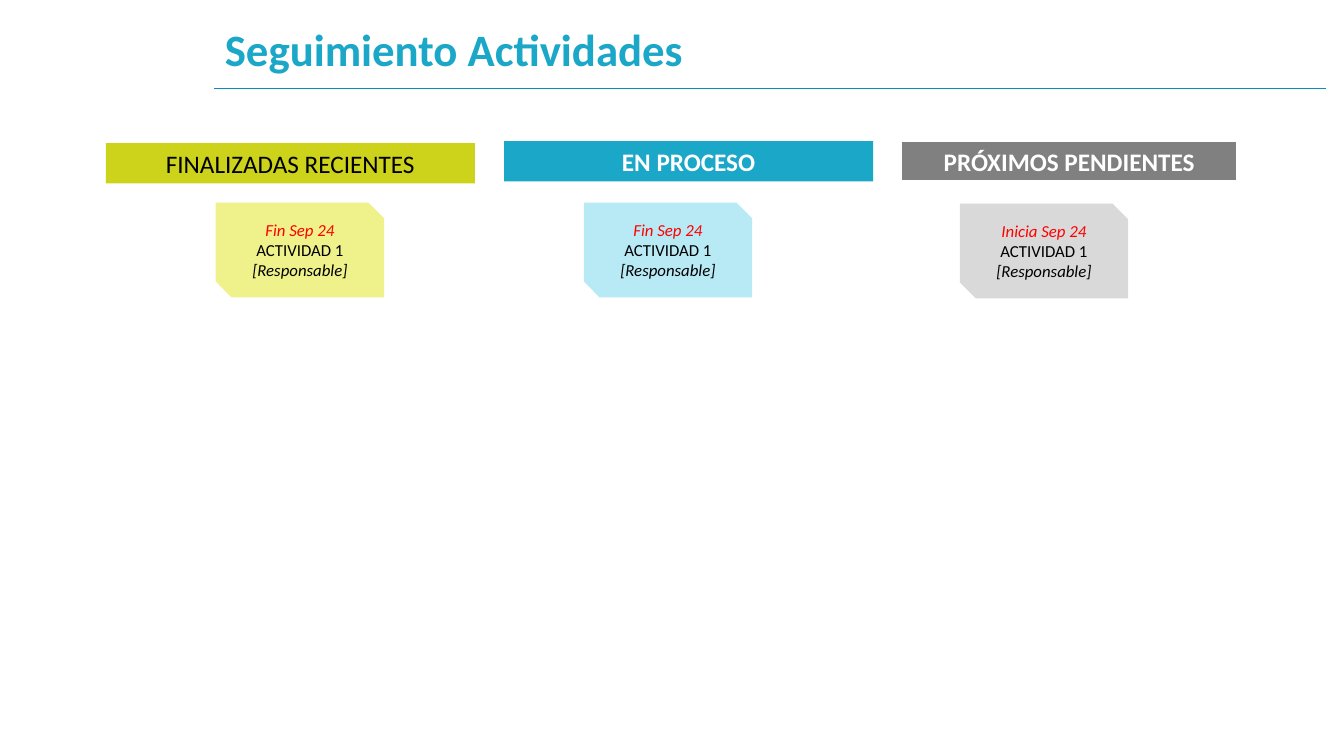
from dataclasses import dataclass

from lxml import etree
from pptx import Presentation
from pptx import util as u
from pptx.dml.color import RGBColor
from pptx.enum import shapes, text
from pptx.oxml.ns import qn

COLORS = {
    "white": "FFFFFF", "black": "000000", "red": "FF0000",
    "rule": "098CBF", "blue": "1AA7C8", "pale_blue": "B8EAF6",
    "lime": "CDD21A", "pale_lime": "EFF18B",
    "gray": "808080", "pale_gray": "D9D9D9",
}
FONT = "Calibri"
GRID = 0.1  # inches per grid column and per grid row
CARD_SIZE = (16.7, 9.4)
HEADER_ROWS = 4


@dataclass
class Box:
    column: float
    row: float
    columns: float
    rows: float


@dataclass
class Run:
    words: str
    color: str
    size: int
    bold: bool = False
    italic: bool = False


@dataclass
class Stage:
    """A coloured heading and the activity card below it."""
    heading: Run
    header: Box
    fill: str
    card: Box
    card_fill: str
    date: str
    outline: str = ""


STAGES = [
    Stage(Run("FINALIZADAS RECIENTES", "black", 18), Box(10.5, 14.2, 36.6, HEADER_ROWS),
          "lime", Box(21.4, 20.1, *CARD_SIZE), "pale_lime", "Fin Sep 24"),
    Stage(Run("EN PROCESO", "white", 18, bold=True), Box(50, 14, 36.6, HEADER_ROWS),
          "blue", Box(57.9, 20.1, *CARD_SIZE), "pale_blue", "Fin Sep 24"),
    Stage(Run("PRÓXIMOS PENDIENTES", "white", 18, bold=True), Box(89.4, 14, 33.3, HEADER_ROWS),
          "gray", Box(95.2, 20.2, *CARD_SIZE), "pale_gray", "Inicia Sep 24", "white"),
]


def cells(count: float) -> int:
    """Length of a number of grid cells."""
    return u.Inches(count * GRID)


def rgb(name: str) -> RGBColor:
    return RGBColor.from_string(COLORS[name])


def place(box: Box) -> tuple:
    return tuple(cells(v) for v in (box.column, box.row, box.columns, box.rows))


def write(frame, runs: list, anchor, alignment) -> None:
    """Fill a text frame with one paragraph for each run."""
    frame.word_wrap = True
    frame.vertical_anchor = anchor
    for index, item in enumerate(runs):
        paragraph = frame.add_paragraph() if index else frame.paragraphs[0]
        paragraph.alignment = alignment
        run = paragraph.add_run()
        run.text = item.words
        formats = {"name": FONT, "size": u.Pt(item.size), "bold": item.bold, "italic": item.italic}
        for name, value in formats.items():
            setattr(run.font, name, value)
        run.font.color.rgb = rgb(item.color)


def add_box(slide, kind, box: Box, fill: str, runs: list, anchor, outline: str = ""):
    shape = slide.shapes.add_shape(kind, *place(box))
    shape.shadow.inherit = False
    shape.fill.solid()
    shape.fill.fore_color.rgb = rgb(fill)
    if outline:
        shape.line.color.rgb = rgb(outline)
        shape.line.width = u.Pt(1.5)
    else:
        shape.line.fill.background()
    write(shape.text_frame, runs, anchor, text.PP_ALIGN.CENTER)
    return shape


def add_title(slide) -> None:
    title = slide.shapes.title
    title.left, title.top, title.width, title.height = place(Box(21.3, 2.3, 110.1, 5.7))
    write(title.text_frame, [Run("Seguimiento Actividades", "blue", 32, bold=True)],
          text.MSO_ANCHOR.MIDDLE, text.PP_ALIGN.LEFT)
    title.text_frame.auto_size = text.MSO_AUTO_SIZE.NONE
    title.text_frame.paragraphs[0].line_spacing = 0.9


def add_title_rule(slide) -> None:
    rule = slide.shapes.add_connector(
        shapes.MSO_CONNECTOR.STRAIGHT, cells(21.2), cells(8.8), cells(131.5), cells(8.8))
    rule.line.color.rgb = rgb("rule")
    rule.line.width = u.Pt(0.5)
    etree.SubElement(rule._element.spPr, qn("a:effectLst"))


def add_stage(slide, stage: Stage) -> None:
    header = add_box(slide, shapes.MSO_SHAPE.RECTANGLE, stage.header, stage.fill,
                     [stage.heading], text.MSO_ANCHOR.TOP, stage.outline)
    header.text_frame.auto_size = text.MSO_AUTO_SIZE.SHAPE_TO_FIT_TEXT
    activity = [
        Run(stage.date, "red", 12, italic=True),
        Run("ACTIVIDAD 1", "black", 12),
        Run("[Responsable]", "black", 12, italic=True),
    ]
    add_box(slide, shapes.MSO_SHAPE.SNIP_2_DIAG_RECTANGLE, stage.card, stage.card_fill,
            activity, text.MSO_ANCHOR.MIDDLE)


def main() -> None:
    presentation = Presentation()
    presentation.slide_width = u.Inches(13.33)
    presentation.slide_height = u.Inches(7.5)
    slide = presentation.slides.add_slide(presentation.slide_layouts.get_by_name("Title Only"))
    add_title_rule(slide)
    add_title(slide)
    for stage in STAGES:
        add_stage(slide, stage)
    presentation.save("out.pptx")


if __name__ == "__main__":
    main()
